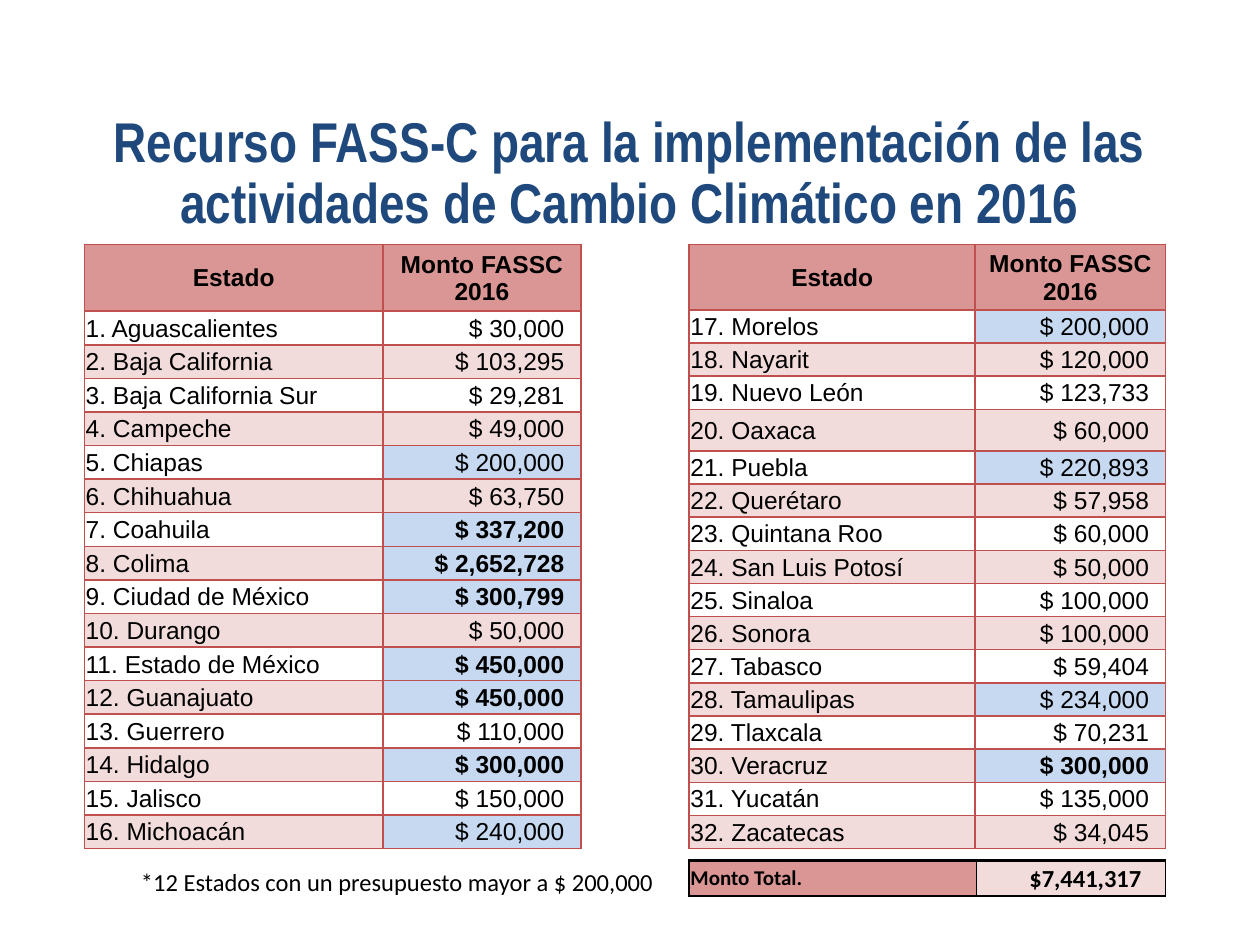
"""Build the slide with the 2016 FASS-C budget per state."""
from lxml.etree import SubElement
from pptx import Presentation
from pptx.dml.color import RGBColor
from pptx.enum.text import MSO_ANCHOR as Anchor, PP_ALIGN as Align
from pptx.oxml.ns import qn
from pptx.util import Inches, Pt

HEADER_RED, PALE_RED, BLUE, WHITE = "DA9694", "F2DCDB", "C6D9F1", "FFFFFF"
BLACK, NAVY, BORDER_RED = "000000", "1F497D", "C0504D"


def style_text(paragraph, font_name, size, color=BLACK, bold=False, align=Align.LEFT):
    paragraph.alignment = align
    for run in paragraph.runs:
        run.font.name = font_name
        run.font.size = Pt(size)
        run.font.bold = bold
        run.font.color.rgb = RGBColor.from_string(color)


def fill_cell(cell, text, fill, borders, right=0.01, font_name="Arial", size=14, bold=False, align=Align.LEFT):
    cell.text = text
    cell.vertical_anchor = Anchor.MIDDLE
    cell.margin_left = cell.margin_top = Inches(0.01)
    cell.margin_right, cell.margin_bottom = Inches(right), 0
    style_text(cell.text_frame.paragraphs[0], font_name, size, bold=bold, align=align)
    properties = cell._tc.get_or_add_tcPr()
    for side, (color, width) in zip("LRTB", borders):
        line = SubElement(properties, qn(f"a:ln{side}"), w=str(Pt(width)))
        SubElement(SubElement(line, qn("a:solidFill")), qn("a:srgbClr"), val=color)
    cell.fill.solid()
    cell.fill.fore_color.rgb = RGBColor.from_string(fill)


first_half = [
    ("Aguascalientes", 30000), ("Baja California", 103295), ("Baja California Sur", 29281),
    ("Campeche", 49000), ("Chiapas", 200000), ("Chihuahua", 63750), ("Coahuila", 337200),
    ("Colima", 2652728), ("Ciudad de México", 300799), ("Durango", 50000),
    ("Estado de México", 450000), ("Guanajuato", 450000), ("Guerrero", 110000),
    ("Hidalgo", 300000), ("Jalisco", 150000), ("Michoacán", 240000),
]
second_half = [
    ("Morelos", 200000), ("Nayarit", 120000), ("Nuevo León", 123733), ("Oaxaca", 60000),
    ("Puebla", 220893), ("Querétaro", 57958), ("Quintana Roo", 60000),
    ("San Luis Potosí", 50000), ("Sinaloa", 100000), ("Sonora", 100000), ("Tabasco", 59404),
    ("Tamaulipas", 234000), ("Tlaxcala", 70231), ("Veracruz", 300000), ("Yucatán", 135000),
    ("Zacatecas", 34045),
]

prs = Presentation()
prs.slide_width, prs.slide_height = Inches(10), Inches(7.5)
slide = prs.slides.add_slide(prs.slide_layouts[6])

title = slide.shapes.add_textbox(Inches(0.5), Inches(0.52), Inches(9), Inches(1.72)).text_frame
title.word_wrap = True
title.vertical_anchor = Anchor.MIDDLE
title.text = "Recurso FASS-C para la implementación de las actividades de Cambio Climático en 2016"
title.paragraphs[0].line_spacing = Pt(35)
style_text(title.paragraphs[0], "Arial Narrow", 32, NAVY, True, Align.CENTER)

table_height = 4.8
state_borders = [(BORDER_RED, 1)] * 4
for states, first_number, left, widths, header_height, tall_rows in (
    (first_half, 1, 0.67, (2.37, 1.57), 0.53, {}),
    (second_half, 17, 5.47, (2.27, 1.51), 0.52, {20: 0.33}),
):
    budget = slide.shapes.add_table(
        len(states) + 1, 2, Inches(left), Inches(1.94), Inches(sum(widths)), Inches(table_height)
    ).table
    budget.first_row = budget.horz_banding = False
    for column, width in zip(budget.columns, widths):
        column.width = Inches(width)
    budget.rows[0].height = Inches(header_height)
    for column, heading in enumerate(("Estado", "Monto FASSC 2016")):
        fill_cell(budget.cell(0, column), heading, HEADER_RED, state_borders, bold=True, align=Align.CENTER)
    free_height = table_height - header_height - sum(tall_rows.values())
    row_height = free_height / (len(states) - len(tall_rows))
    for row, (state, amount) in enumerate(states, 1):
        number = first_number + row - 1
        band = WHITE if number % 2 else PALE_RED
        budget.rows[row].height = Inches(tall_rows.get(number, row_height))
        fill_cell(budget.cell(row, 0), f"{number}. {state}", band, state_borders)
        fill_cell(budget.cell(row, 1), f"$ {amount:,}", BLUE if amount >= 200000 else band,
                  state_borders, right=0.13, bold=amount >= 300000, align=Align.RIGHT)

footnote = slide.shapes.add_textbox(Inches(1.02), Inches(6.83), Inches(7.95), Inches(0.34)).text_frame
footnote.word_wrap = True
footnote.text = "*12 Estados con un presupuesto mayor a $ 200,000"
style_text(footnote.paragraphs[0], "Calibri", 14)

total = slide.shapes.add_table(1, 2, Inches(5.47), Inches(6.83), Inches(3.78), Inches(0.28)).table
total.first_row = total.horz_banding = False
total.columns[0].width, total.columns[1].width = Inches(2.28), Inches(1.5)
total_borders = [(BLACK, 1), (BLACK, 1), (BLACK, 1.5), (BLACK, 1.5)]
fill_cell(total.cell(0, 0), "Monto Total.", HEADER_RED, total_borders,
          font_name="Calibri", size=12, bold=True)
fill_cell(total.cell(0, 1), "$7,441,317", PALE_RED, total_borders, right=0.19,
          font_name="Calibri", bold=True, align=Align.RIGHT)

prs.save("out.pptx")
